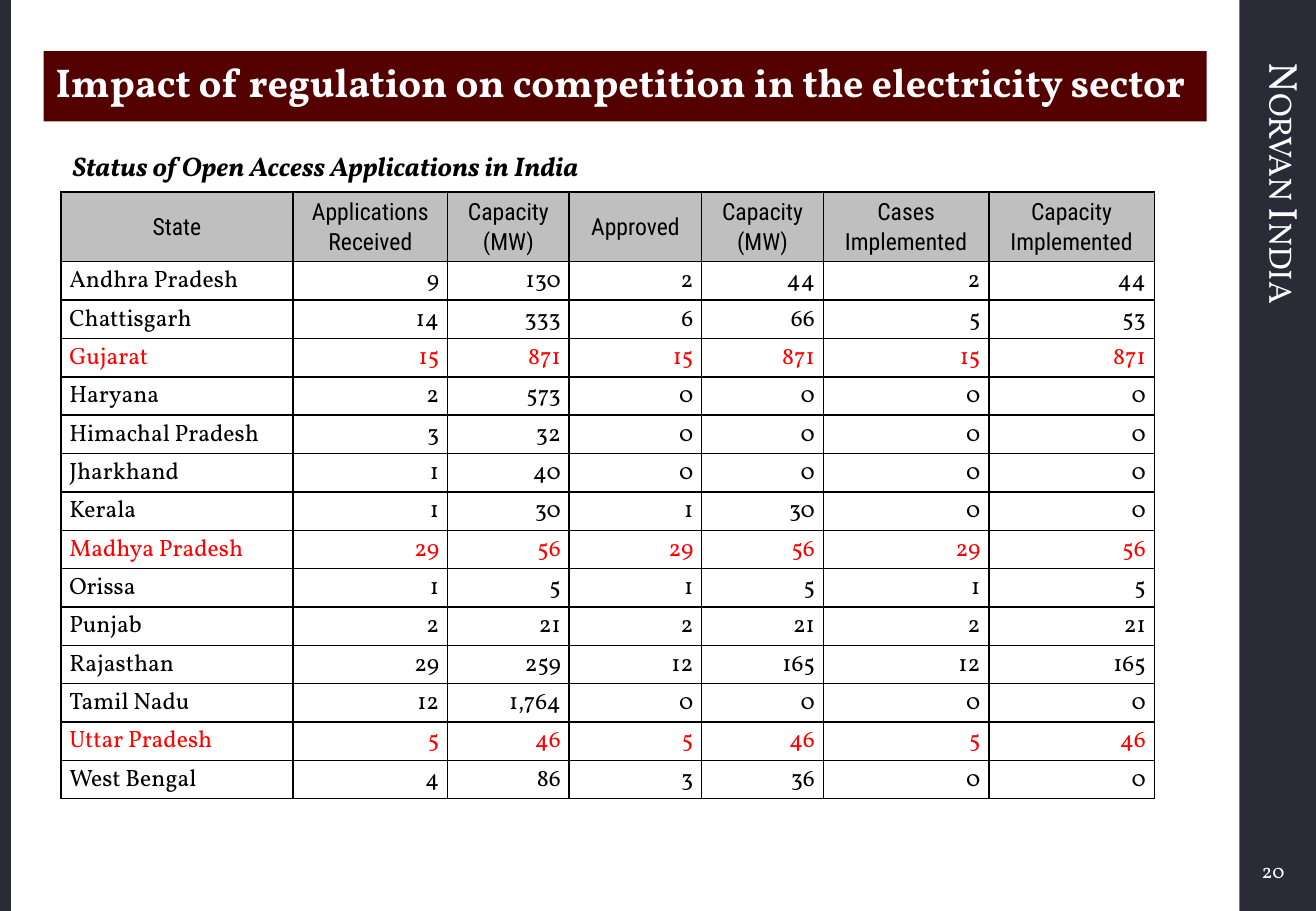
from lxml import etree
from pptx import Presentation
from pptx.dml.color import RGBColor
from pptx.enum.shapes import MSO_SHAPE
from pptx.enum.text import MSO_ANCHOR, PP_ALIGN
from pptx.oxml.ns import qn
from pptx.util import Inches, Pt

RECTANGLE = MSO_SHAPE.RECTANGLE
TOP, MIDDLE = MSO_ANCHOR.TOP, MSO_ANCHOR.MIDDLE
LEFT, CENTER, RIGHT = PP_ALIGN.LEFT, PP_ALIGN.CENTER, PP_ALIGN.RIGHT

WHITE = RGBColor(0xFF, 0xFF, 0xFF)
BLACK = RGBColor(0x00, 0x00, 0x00)
RED = RGBColor(0xFF, 0x00, 0x00)
MAROON = RGBColor(0x54, 0x00, 0x00)
SLATE = RGBColor(0x2B, 0x2B, 0x37)
GRAY = RGBColor(0xBF, 0xBF, 0xBF)

SERIF = "Vollkorn"
CONDENSED = "Roboto Condensed"
WIDTH, HEIGHT = Inches(10.83), Inches(7.5)

# Areas are left, top, width and height in percent of the slide
RIGHT_BAND = (94.18, 0, 5.82, 100)
LEFT_BAND = (0, 0, 0.83, 100)
FIRM_AREA = (94.18, 5.6, 5.82, 85.6)
NUMBER_AREA = (87.72, 93.33, 10.8, 4.4)
TITLE_AREA = (3.32, 5.6, 88.37, 7.73)
TABLE_AREA = (4.62, 21.07, 83.1, 66.67)
CAPTION_AREA = (4.62, 15.73, 66.2, 4.93)

COLUMN_WEIGHTS = (1.91, 1.27, 1, 1.09, 1, 1.36, 1.36)
HEADER_SHARE = 0.115
HEADERS = ("State", "Applications\nReceived", "Capacity (MW)", "Approved",
           "Capacity (MW)", "Cases\nImplemented", "Capacity\nImplemented")
STATES = (
    ("Andhra Pradesh", 9, 130, 2, 44, 2, 44),
    ("Chattisgarh", 14, 333, 6, 66, 5, 53),
    ("Gujarat", 15, 871, 15, 871, 15, 871),
    ("Haryana", 2, 573, 0, 0, 0, 0),
    ("Himachal Pradesh", 3, 32, 0, 0, 0, 0),
    ("Jharkhand", 1, 40, 0, 0, 0, 0),
    ("Kerala", 1, 30, 1, 30, 0, 0),
    ("Madhya Pradesh", 29, 56, 29, 56, 29, 56),
    ("Orissa", 1, 5, 1, 5, 1, 5),
    ("Punjab", 2, 21, 2, 21, 2, 21),
    ("Rajasthan", 29, 259, 12, 165, 12, 165),
    ("Tamil Nadu", 12, 1764, 0, 0, 0, 0),
    ("Uttar Pradesh", 5, 46, 5, 46, 5, 46),
    ("West Bengal", 4, 86, 3, 36, 0, 0),
)
HIGHLIGHTED = {"Gujarat", "Madhya Pradesh", "Uttar Pradesh"}


def place(area):
    """Turn percent of the slide into lengths."""
    sides = (WIDTH, HEIGHT, WIDTH, HEIGHT)
    return [round(side * share / 100) for side, share in zip(sides, area)]


def write(frame, text, size, color, font=SERIF, align=LEFT, bold=False, italic=False):
    """Fill the first paragraph of a frame; a newline becomes a line break."""
    para = frame.paragraphs[0]
    para.alignment = align
    for index, line in enumerate(text.split("\n")):
        if index:
            para.add_line_break()
        span = para.add_run()
        span.text = line
        span.font.name = font
        span.font.size = Pt(size)
        span.font.color.rgb = color
        span.font.bold = bold
        span.font.italic = italic
    return para


def add_band(page, area, color):
    band = page.shapes.add_shape(RECTANGLE, *place(area))
    band.shadow.inherit = False
    band.fill.solid()
    band.fill.fore_color.rgb = color
    band.line.fill.background()
    return band


def add_label(page, area, text, size, color, anchor=TOP, **style):
    box = page.shapes.add_textbox(*place(area))
    frame = box.text_frame
    frame.word_wrap = True
    frame.vertical_anchor = anchor
    write(frame, text, size, color, **style)
    return frame


def add_title(page, text):
    frame = add_band(page, TITLE_AREA, MAROON).text_frame
    frame.word_wrap = True
    frame.vertical_anchor = TOP
    write(frame, text, 23.8, WHITE, bold=True)


def add_firm_name(page, text):
    """Write the name down the right band in small capitals."""
    frame = add_label(page, FIRM_AREA, text, 24, WHITE)
    frame._txBody.bodyPr.set("vert", "vert")
    frame.paragraphs[0].runs[0]._r.get_or_add_rPr().set("cap", "small")


def add_borders(cell):
    properties = cell._tc.get_or_add_tcPr()
    for index, side in enumerate(("a:lnL", "a:lnR", "a:lnT", "a:lnB")):
        line = etree.Element(qn(side), w=str(Pt(1)))
        fill = etree.SubElement(line, qn("a:solidFill"))
        etree.SubElement(fill, qn("a:srgbClr"), val=str(BLACK))
        properties.insert(index, line)


def fill_cell(cell, text, color, font, align):
    cell.margin_left = cell.margin_right = Inches(0.07)
    cell.margin_top = cell.margin_bottom = 0
    cell.vertical_anchor = MIDDLE
    para = write(cell.text_frame, text, 14, color, font, align)
    para.line_spacing = 1.05
    add_borders(cell)


def add_status_table(page):
    left, top, width, height = place(TABLE_AREA)
    table = page.shapes.add_table(len(STATES) + 1, len(HEADERS),
                                  left, top, width, height).table
    table.first_row = table.horz_banding = False
    for column, weight in zip(table.columns, COLUMN_WEIGHTS):
        column.width = round(width * weight / sum(COLUMN_WEIGHTS))
    header_height = round(height * HEADER_SHARE)
    for row in table.rows:
        row.height = round((height - header_height) / len(STATES))
    table.rows[0].height = header_height

    for column, header in enumerate(HEADERS):
        cell = table.cell(0, column)
        cell.fill.solid()
        cell.fill.fore_color.rgb = GRAY
        fill_cell(cell, header, BLACK, CONDENSED, CENTER)
    for row, (state, *counts) in enumerate(STATES, start=1):
        color = RED if state in HIGHLIGHTED else BLACK
        texts = [state] + [f"{count:,}" for count in counts]
        for column, text in enumerate(texts):
            cell = table.cell(row, column)
            cell.fill.background()
            fill_cell(cell, text, color, SERIF, RIGHT if column else LEFT)


def main():
    deck = Presentation()
    deck.slide_width, deck.slide_height = WIDTH, HEIGHT
    page = deck.slides.add_slide(deck.slide_layouts[6])
    add_band(page, RIGHT_BAND, SLATE)
    add_band(page, LEFT_BAND, SLATE)
    add_firm_name(page, "Norvan India")
    add_label(page, NUMBER_AREA, "20", 12, WHITE, MIDDLE, align=RIGHT)
    add_title(page, "Impact of regulation on competition in the electricity sector")
    add_status_table(page)
    add_label(page, CAPTION_AREA, "Status of Open Access Applications in India",
              16, BLACK, bold=True, italic=True)
    deck.save("out.pptx")


if __name__ == "__main__":
    main()
